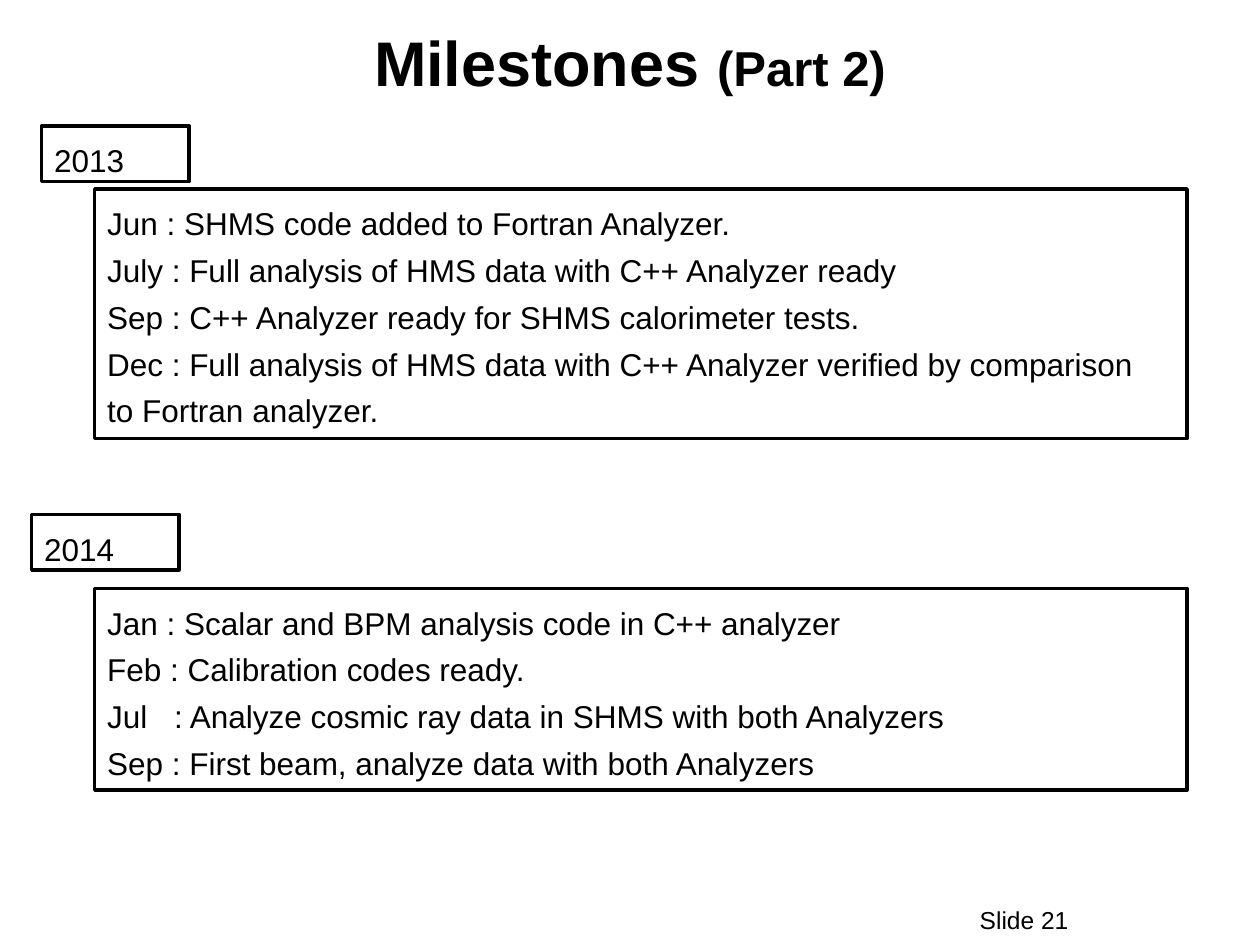
from dataclasses import dataclass

from lxml import etree
from pptx import Presentation
from pptx.dml.color import RGBColor
from pptx.enum.shapes import MSO_SHAPE
from pptx.enum.text import MSO_ANCHOR, PP_ALIGN
from pptx.oxml.ns import qn
from pptx.util import Cm, Pt

RECTANGLE = MSO_SHAPE.RECTANGLE
TOP, MIDDLE = MSO_ANCHOR.TOP, MSO_ANCHOR.MIDDLE
LEFT, CENTER, RIGHT = PP_ALIGN.LEFT, PP_ALIGN.CENTER, PP_ALIGN.RIGHT


@dataclass(frozen=True)
class Theme:
    font: str = "Arial"
    ink: RGBColor = RGBColor(0, 0, 0)
    title: int = 36
    subtitle: int = 28
    body: int = 18
    footer: int = 14
    border: int = 2
    title_spacing: float = 1.08
    body_spacing: float = 1.24


THEME = Theme()
TITLE = [("Milestones ", THEME.title), ("(Part 2)", THEME.subtitle)]
FOOTER = "Slide 21"
YEARS = [
    {
        "year": "2013",
        "label": (0.84, 2.54),
        "list_top": 3.81,
        "list_height": 5.03,
        "milestones": [
            "Jun : SHMS code added to Fortran Analyzer.",
            "July : Full analysis of HMS data with C++ Analyzer ready",
            "Sep : C++ Analyzer ready for SHMS calorimeter tests.",
            "Dec : Full analysis of HMS data with C++ Analyzer verified by comparison\vto Fortran analyzer.",
        ],
    },
    {
        "year": "2014",
        "label": (0.64, 10.37),
        "list_top": 11.86,
        "list_height": 4.07,
        "milestones": [
            "Jan : Scalar and BPM analysis code in C++ analyzer",
            "Feb : Calibration codes ready.",
            "Jul\t: Analyze cosmic ray data in SHMS with both Analyzers",
            "Sep : First beam, analyze data with both Analyzers",
        ],
    },
]
LABEL_SIZE = (2.97, 1.12)
LIST_LEFT, LIST_WIDTH = 1.91, 22.02
COLON_TAB = 1.35


def style_run(run, size, bold=False):
    run.font.name = THEME.font
    run.font.size = Pt(size)
    run.font.bold = bold
    run.font.color.rgb = THEME.ink


def add_tab_stop(paragraph, position):
    properties = paragraph._p.get_or_add_pPr()
    tabs = etree.SubElement(properties, qn("a:tabLst"))
    etree.SubElement(tabs, qn("a:tab"), pos=str(Cm(position)), algn="l")


def add_bordered_box(slide, left, top, width, height, lines):
    shape = slide.shapes.add_shape(RECTANGLE, Cm(left), Cm(top), Cm(width), Cm(height))
    shape.shadow.inherit = False
    shape.fill.background()
    shape.line.color.rgb = THEME.ink
    shape.line.width = Pt(THEME.border)
    text_frame = shape.text_frame
    text_frame.word_wrap = True
    text_frame.vertical_anchor = TOP
    text_frame.text = "\n".join(lines)
    for paragraph in text_frame.paragraphs:
        paragraph.alignment = LEFT
        paragraph.line_spacing = THEME.body_spacing
        if "\t" in paragraph.text:
            add_tab_stop(paragraph, COLON_TAB)
        for run in paragraph.runs:
            style_run(run, THEME.body)


def add_text_box(slide, left, top, width, height, alignment):
    text_box = slide.shapes.add_textbox(Cm(left), Cm(top), Cm(width), Cm(height))
    text_frame = text_box.text_frame
    text_frame.word_wrap = True
    text_frame.vertical_anchor = MIDDLE
    paragraph = text_frame.paragraphs[0]
    paragraph.alignment = alignment
    return text_frame, paragraph


def add_title(slide):
    text_frame, paragraph = add_text_box(slide, 1.27, 0, 22.86, 2.34, CENTER)
    text_frame.margin_left = text_frame.margin_right = 0
    text_frame.margin_top = text_frame.margin_bottom = 0
    paragraph.line_spacing = THEME.title_spacing
    for text, size in TITLE:
        run = paragraph.add_run()
        run.text = text
        style_run(run, size, bold=True)


def add_footer(slide):
    _, paragraph = add_text_box(slide, 17.78, 18.03, 4.01, 1.02, RIGHT)
    paragraph.text = FOOTER
    style_run(paragraph.runs[0], THEME.footer)


def main():
    presentation = Presentation()
    presentation.slide_width, presentation.slide_height = Cm(25.4), Cm(19.05)
    slide = presentation.slides.add_slide(presentation.slide_layouts[6])
    add_title(slide)
    for entry in YEARS:
        add_bordered_box(slide, *entry["label"], *LABEL_SIZE, [entry["year"]])
        add_bordered_box(slide, LIST_LEFT, entry["list_top"], LIST_WIDTH,
                         entry["list_height"], entry["milestones"])
    add_footer(slide)
    presentation.save("out.pptx")


if __name__ == "__main__":
    main()
